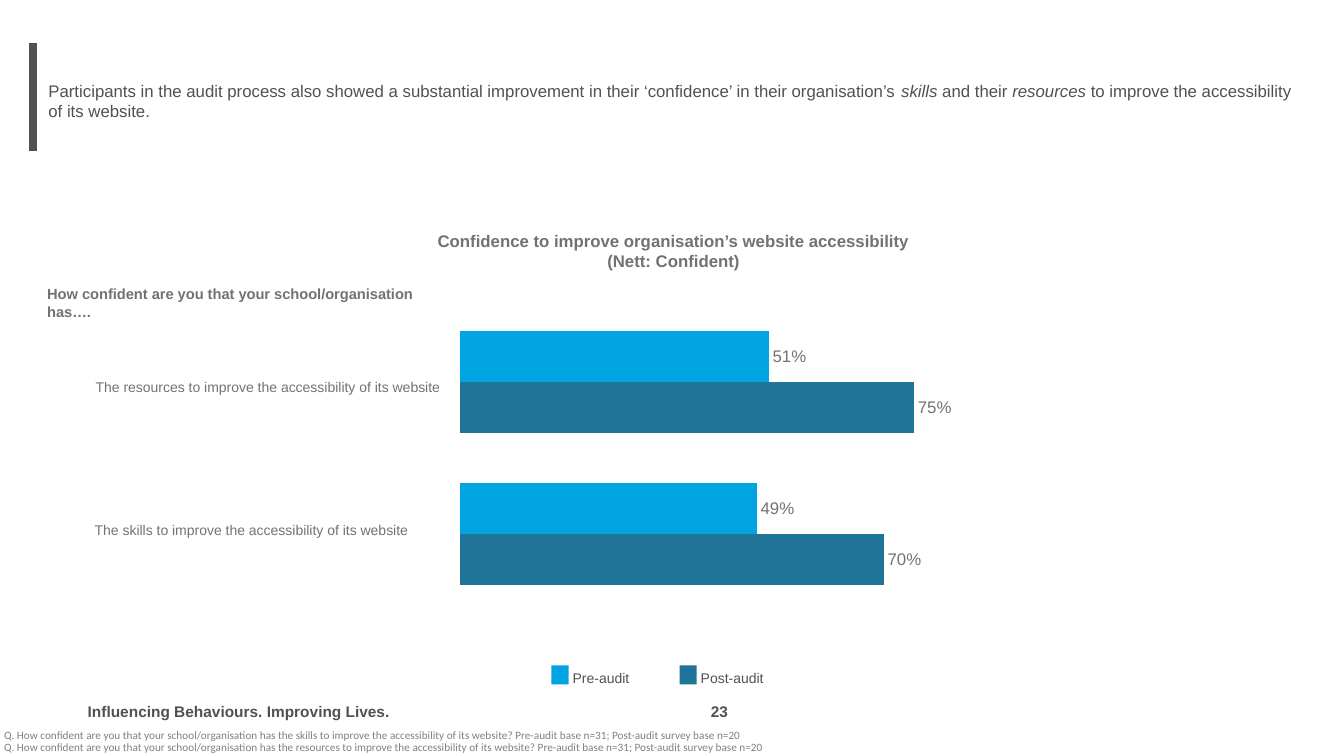
from lxml import etree
from pptx import Presentation
from pptx.chart.data import CategoryChartData
from pptx.dml.color import RGBColor
from pptx.enum.chart import XL_CHART_TYPE, XL_LABEL_POSITION
from pptx.enum.shapes import MSO_CONNECTOR, MSO_SHAPE
from pptx.enum.text import MSO_ANCHOR, MSO_AUTO_SIZE, PP_ALIGN
from pptx.oxml import parse_xml
from pptx.oxml.ns import nsdecls, qn
from pptx.util import Inches, Pt

# Content: a paragraph is a list of (text, italic) runs or a plain string
HEADLINE = [[
    ("Participants in the audit process also showed a substantial improvement in "
     "their ‘confidence’ in their organisation’s ", False),
    ("skills", True),
    (" and their ", False),
    ("resources", True),
    (" to improve the accessibility of its website.", False),
]]
CHART_TITLE = ["Confidence to improve organisation’s website accessibility",
               "(Nett: Confident)"]
QUESTION = "How confident are you that your school/organisation has…."
# Category, label on the slide, label left and top; the first is the lowest
CATEGORIES = [
    ("Skills", "The skills to improve the accessibility of its website", 0.84, 5.11),
    ("Resources", "The resources to improve the accessibility of its website", 0.85, 3.69),
]
# Series, colour name, values, legend key left, legend text width
SERIES = [
    ("Post-audit", "post", (0.70, 0.75), 6.74, 1.91),
    ("Pre-audit", "pre", (0.49, 0.51), 5.47, 1.66),
]
FOOTNOTES = [
    "Q. How confident are you that your school/organisation has the "
    f"{subject} to improve the accessibility of its website? "
    "Pre-audit base n=31; Post-audit survey base n=20"
    for subject in ("skills", "resources")
]
TAGLINE = "Influencing Behaviours. Improving Lives."
PAGE_NUMBER = "23"

COLORS = {"dark": "515154", "gray": "767171", "note": "808080",
          "pre": "00A4E0", "post": "1F7498"}
SMALL_INSET = (0.04, 0.04)
NORMAL_INSET = (0.1, 0.05)
KEY_WIDTH, KEY_HEIGHT, LEGEND_TOP = 0.17, 0.19, 6.6
FOOTER_TOP, FOOTER_HEIGHT = 6.89, 0.3


def color(name):
    return RGBColor.from_string(COLORS[name])


def set_font(font, size, color_name, bold=False, name="Arial"):
    font.name = name
    font.size = Pt(size)
    font.bold = bold
    font.color.rgb = color(color_name)


def write(shape, box, paragraphs, size, color_name, bold=False, font="Arial",
          align=PP_ALIGN.LEFT, anchor=MSO_ANCHOR.MIDDLE, inset=NORMAL_INSET,
          spacing=None):
    """Place a shape and fill its text frame run by run."""
    shape.left, shape.top, shape.width, shape.height = map(Inches, box)
    frame = shape.text_frame
    frame.word_wrap = True
    frame.auto_size = MSO_AUTO_SIZE.NONE
    frame.vertical_anchor = anchor
    frame.margin_left = frame.margin_right = Inches(inset[0])
    frame.margin_top = frame.margin_bottom = Inches(inset[1])
    for index, content in enumerate(paragraphs):
        paragraph = frame.add_paragraph() if index else frame.paragraphs[0]
        paragraph.alignment = align
        if spacing:
            paragraph.line_spacing = spacing
        runs = [(content, False)] if isinstance(content, str) else content
        for text, italic in runs:
            run = paragraph.add_run()
            run.text = text
            set_font(run.font, size, color_name, bold, font)
            run.font.italic = italic


def add_text(slide, box, paragraphs, *args, **options):
    shape = slide.shapes.add_textbox(*map(Inches, box))
    write(shape, box, paragraphs, *args, **options)


def add_headline(slide):
    write(slide.shapes.title, (0.38, 0.24, 12.62, 1.52), HEADLINE, 12, "dark")
    bar = slide.shapes.add_connector(MSO_CONNECTOR.STRAIGHT, Inches(0.33), Inches(0.43),
                                     Inches(0.33), Inches(1.5))
    bar.line.color.rgb = color("dark")
    bar.line.width = Pt(6)
    etree.SubElement(bar._element.spPr, qn("a:effectLst"))


def add_confidence_chart(slide):
    data = CategoryChartData(number_format="0%")
    data.categories = [category[0] for category in CATEGORIES]
    for name, _, values, *_ in SERIES:
        data.add_series(name, values)
    box = map(Inches, (4.44, 2.97, 6.25, 3.15))
    chart = slide.shapes.add_chart(XL_CHART_TYPE.BAR_CLUSTERED, *box, data).chart
    chart.has_title = False
    chart.has_legend = False
    set_font(chart.font, 10, "dark")

    # Hidden axes with a full percentage scale
    chart.category_axis.visible = False
    value_axis = chart.value_axis
    value_axis.visible = False
    value_axis.has_major_gridlines = False
    value_axis.minimum_scale, value_axis.maximum_scale = 0, 1
    value_axis.major_unit = 1
    value_axis.tick_labels.number_format = "0%"
    value_axis.tick_labels.number_format_is_linked = False

    # Bars and value labels
    plot = chart.plots[0]
    plot.gap_width = 100
    plot.overlap = 0
    plot.vary_by_categories = False
    for series, (_, color_name, *_) in zip(plot.series, SERIES):
        series.format.fill.solid()
        series.format.fill.fore_color.rgb = color(color_name)
        series.invert_if_negative = False
        labels = series.data_labels
        labels.show_value = True
        labels.number_format = "0%"
        labels.number_format_is_linked = False
        labels.position = XL_LABEL_POSITION.OUTSIDE_END
        set_font(labels.font, 12, "gray")

    # Plot area with an equal margin all round
    plot_area = chart._chartSpace.chart.plotArea
    for layout in plot_area.findall(qn("c:layout")):
        plot_area.remove(layout)
    plot_area.insert(0, parse_xml(
        f'<c:layout {nsdecls("c")}><c:manualLayout><c:layoutTarget val="inner"/>'
        '<c:xMode val="edge"/><c:yMode val="edge"/><c:x val="0.02"/><c:y val="0.02"/>'
        '<c:w val="0.96"/><c:h val="0.96"/></c:manualLayout></c:layout>'))


def add_chart_texts(slide):
    add_text(slide, (3.09, 2.26, 7.18, 0.46), CHART_TITLE, 12, "gray", bold=True,
             align=PP_ALIGN.CENTER)
    add_text(slide, (0.37, 2.77, 4.12, 0.46), [QUESTION], 10.5, "gray", bold=True)
    for _, label, left, top in CATEGORIES:
        add_text(slide, (left, top, 4.51, 0.3), [label], 10, "gray")


def add_legend(slide):
    for name, color_name, _, left, text_width in reversed(SERIES):
        key = slide.shapes.add_shape(MSO_SHAPE.RECTANGLE, Inches(left), Inches(LEGEND_TOP),
                                     Inches(KEY_WIDTH), Inches(KEY_HEIGHT))
        key.shadow.inherit = False
        key.fill.solid()
        key.fill.fore_color.rgb = color(color_name)
        key.line.fill.background()
        add_text(slide, (left + KEY_WIDTH, LEGEND_TOP - 0.03, text_width, 0.52), [name],
                 10, "dark", anchor=MSO_ANCHOR.TOP, inset=SMALL_INSET, spacing=1.2)


def add_footer(slide):
    for text, left, width, align in ((TAGLINE, 0.83, 3.95, PP_ALIGN.LEFT),
                                     (PAGE_NUMBER, 6.84, 0.59, PP_ALIGN.CENTER)):
        add_text(slide, (left, FOOTER_TOP, width, FOOTER_HEIGHT), [text], 11, "dark",
                 bold=True, align=align, inset=SMALL_INSET, spacing=1.2)
    add_text(slide, (0, 7.19, 11.94, 0.39), FOOTNOTES, 8, "note", font="Calibri",
             anchor=MSO_ANCHOR.TOP, inset=SMALL_INSET, spacing=Pt(9))


def main():
    presentation = Presentation()
    presentation.slide_width = Inches(13.33)
    presentation.slide_height = Inches(7.5)
    title_only = presentation.slide_layouts[5]
    slide = presentation.slides.add_slide(title_only)
    add_headline(slide)
    add_confidence_chart(slide)
    add_chart_texts(slide)
    add_legend(slide)
    add_footer(slide)
    presentation.save("out.pptx")


if __name__ == "__main__":
    main()
